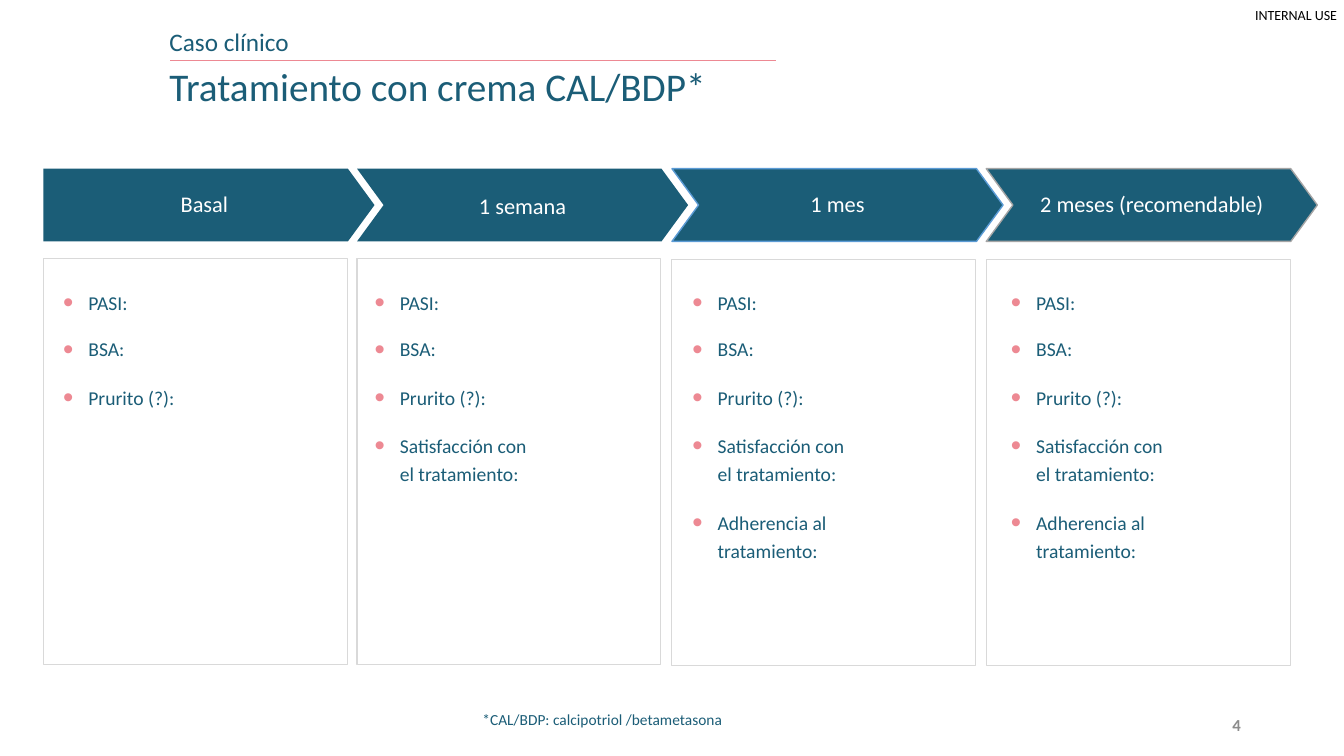
"""Builds the slide on treatment follow-up visits with CAL/BDP cream."""
from lxml import etree
from pptx import Presentation
from pptx.dml.color import RGBColor
from pptx.enum.shapes import MSO_CONNECTOR, MSO_SHAPE
from pptx.enum.text import MSO_ANCHOR, PP_ALIGN
from pptx.oxml.ns import qn
from pptx.util import Pt

TEAL = RGBColor(0x1B, 0x5D, 0x77)
PINK = RGBColor(0xED, 0x89, 0x93)
WHITE = RGBColor(0xFF, 0xFF, 0xFF)
BLACK = RGBColor(0x00, 0x00, 0x00)
PAGE_GRAY = RGBColor(0x8C, 0x8C, 0x8C)
CARD_GRAY = RGBColor(0xD9, 0xD9, 0xD9)
BLUE_EDGE = RGBColor(0x5B, 0x9B, 0xD5)
GRAY_EDGE = RGBColor(0xA5, 0xA5, 0xA5)
CENTER, RIGHT = PP_ALIGN.CENTER, PP_ALIGN.RIGHT
MIDDLE = MSO_ANCHOR.MIDDLE
RECTANGLE = MSO_SHAPE.RECTANGLE
STRAIGHT = MSO_CONNECTOR.STRAIGHT

ARROW_TOP, ARROW_BODY, ARROW_TIP, ARROW_HEIGHT = 120.5, 217.5, 19, 52
CARD_WIDTH, CARD_HEIGHT = 217, 290

MEASURES = [
    ("PASI:", 201, 206, 27),
    ("BSA:", 234, 206, 27),
    ("Prurito (?):", 268.5, 206, 27),
    ("Satisfacción con el tratamiento:", 303, 130, 66),
    ("Adherencia al tratamiento:", 358, 142, 58),
]
VISITS = [
    ("Basal", 31, 38, 184.5, 3, None),
    ("1 semana", 255, 260.5, 184.5, 4, None),
    ("1 mes", 480, 487.5, 185.5, 5, BLUE_EDGE),
    ("2 meses (recomendable)", 704.5, 715, 185.5, 5, GRAY_EDGE),
]


def write(paragraph, text, size, color, spacing=None):
    paragraph.text = text
    paragraph.line_spacing = spacing
    paragraph.font.name = "Calibri"
    paragraph.font.size = Pt(size)
    paragraph.font.color.rgb = color


def add_box(left, top, width, height):
    box = slide.shapes.add_textbox(Pt(left), Pt(top), Pt(width), Pt(height))
    box.text_frame.word_wrap = True
    return box.text_frame


presentation = Presentation()
presentation.slide_width = Pt(960)
presentation.slide_height = Pt(540)
slide = presentation.slides.add_slide(presentation.slide_layouts[6])

footnote = add_box(337.5, 504, 479.5, 21)
write(footnote.paragraphs[0], "*CAL/BDP: calcipotriol /betametasona", 11, TEAL)

label = add_box(896.5, 5, 61, 12)
label.word_wrap = False
label.margin_left = label.margin_top = label.margin_right = label.margin_bottom = 0
write(label.paragraphs[0], "INTERNAL USE", 10, BLACK)

page_number = add_box(677.5, 503.5, 216, 29)
page_number.vertical_anchor = MIDDLE
write(page_number.paragraphs[0], "4", 12, PAGE_GRAY)
page_number.paragraphs[0].font.bold = True
page_number.paragraphs[0].alignment = RIGHT

write(add_box(114, 18, 554, 45).paragraphs[0], "Caso clínico", 18, TEAL, 0.9)
write(add_box(114, 41, 449, 41).paragraphs[0], "Tratamiento con crema CAL/BDP*", 28, TEAL)

rule = slide.shapes.add_connector(STRAIGHT, Pt(121.5), Pt(43.2), Pt(554.5), Pt(43.2))
rule.line.color.rgb = PINK
rule.line.width = Pt(0.5)
etree.SubElement(rule._element.spPr, qn("a:effectLst"))

for index, (visit, left, list_left, card_top, count, edge) in enumerate(VISITS):
    middle, bottom = ARROW_TOP + ARROW_HEIGHT / 2, ARROW_TOP + ARROW_HEIGHT
    shoulder = left + ARROW_BODY
    outline = [(shoulder, ARROW_TOP), (shoulder + ARROW_TIP, middle),
               (shoulder, bottom), (left, bottom)]
    if index:
        outline.append((left + ARROW_TIP, middle))
    builder = slide.shapes.build_freeform(Pt(left), Pt(ARROW_TOP))
    builder.add_line_segments([(Pt(x), Pt(y)) for x, y in outline], close=True)
    arrow = builder.convert_to_shape()
    arrow.shadow.inherit = False
    arrow.fill.solid()
    arrow.fill.fore_color.rgb = TEAL
    if edge:
        arrow.line.color.rgb = edge
        arrow.line.width = Pt(1)
    else:
        arrow.line.fill.background()
    frame = arrow.text_frame
    frame.word_wrap = True
    frame.vertical_anchor = MIDDLE
    frame.margin_left, frame.margin_right = (Pt(21), Pt(21)) if index else (Pt(8), Pt(14.5))
    frame.margin_top = frame.margin_bottom = Pt(16)
    write(frame.paragraphs[0], visit, 16, WHITE, None if index == 1 else 0.9)
    frame.paragraphs[0].alignment = CENTER

    for measure, top, width, height in MEASURES[:count]:
        paragraph = add_box(list_left, top, width, height).paragraphs[0]
        properties = paragraph._p.get_or_add_pPr()
        properties.set("marL", str(Pt(18)))
        properties.set("indent", str(-Pt(18)))
        bullet_color = etree.SubElement(properties, qn("a:buClr"))
        etree.SubElement(bullet_color, qn("a:srgbClr"), val=str(PINK))
        etree.SubElement(properties, qn("a:buSzPct"), val="150000")
        etree.SubElement(properties, qn("a:buFont"), typeface="Arial")
        etree.SubElement(properties, qn("a:buChar"), char="•")
        write(paragraph, measure, 14, TEAL, 1.2)

    card = slide.shapes.add_shape(RECTANGLE, Pt(left), Pt(card_top), Pt(CARD_WIDTH), Pt(CARD_HEIGHT))
    card.shadow.inherit = False
    card.fill.background()
    card.line.color.rgb = CARD_GRAY
    card.line.width = Pt(0.75)

presentation.save("out.pptx")
